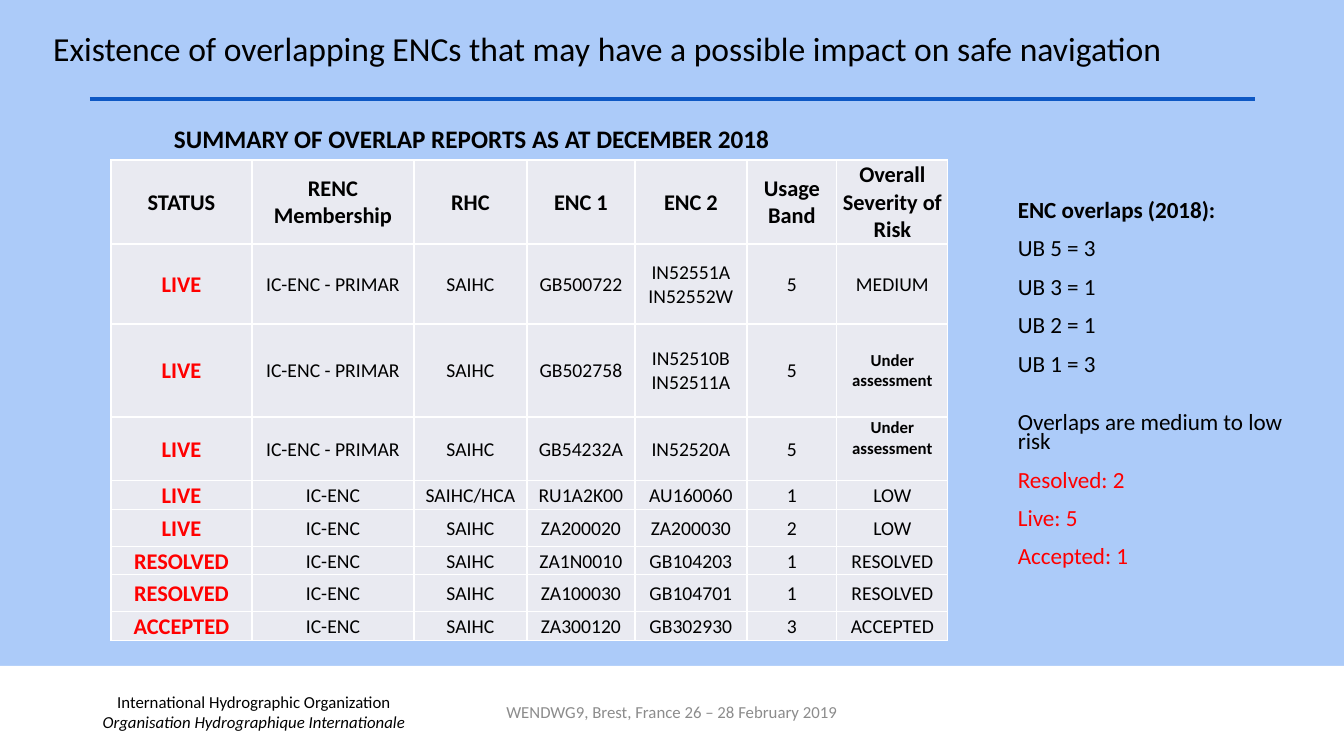
"""Build the slide on overlapping ENCs with its report table and summary."""
from lxml.etree import SubElement
from pptx import Presentation
from pptx.dml.color import RGBColor
from pptx.enum.shapes import MSO_CONNECTOR, MSO_SHAPE
from pptx.enum.text import MSO_ANCHOR, PP_ALIGN
from pptx.oxml import parse_xml
from pptx.oxml.ns import nsdecls, qn
from pptx.util import Pt

PX = 914400 / 100.8
BLACK = RGBColor(0x00, 0x00, 0x00)
WHITE = RGBColor(0xFF, 0xFF, 0xFF)
RED = RGBColor(0xFF, 0x00, 0x00)
GREY = RGBColor(0x8C, 0x8C, 0x8C)
SKY = RGBColor(0xAC, 0xCB, 0xF9)
BLUE = RGBColor(0x0E, 0x58, 0xC4)
PALE = RGBColor(0xE9, 0xEA, 0xF1)


def px(*sizes):
    """Turn pixels into EMU."""
    return [round(size * PX) for size in sizes]


def write(frame, lines, size, color=BLACK, bold=False, align=PP_ALIGN.LEFT, space=None):
    """Fill a text frame with one paragraph a line."""
    frame.word_wrap = True
    for i, line in enumerate(lines):
        para = frame.add_paragraph() if i else frame.paragraphs[0]
        para.alignment = align
        para.line_spacing = space
        run = para.add_run()
        run.text = line
        font = run.font
        font.name, font.size, font.bold = "Calibri", Pt(size), bold
        font.color.rgb = color


deck = Presentation()
deck.slide_width, deck.slide_height = px(1344, 756)
slide = deck.slides.add_slide(deck.slide_layouts[5])
slide.background.fill.solid()
slide.background.fill.fore_color.rgb = SKY
shapes = slide.shapes

rule = shapes.add_connector(MSO_CONNECTOR.STRAIGHT, *px(90, 99, 1255, 99))
rule.line.color.rgb = BLUE
rule.line.width = Pt(2.25)
SubElement(rule.element.spPr, qn("a:effectLst"))

band = shapes.add_shape(MSO_SHAPE.RECTANGLE, *px(0, 666, 1344, 90))
band.shadow.inherit = False
band.fill.solid()
band.fill.fore_color.rgb = WHITE
band.line.fill.background()

title = shapes.title
title.left, title.top, title.width, title.height = px(43, 15, 1300, 71)
title.text_frame.vertical_anchor = MSO_ANCHOR.MIDDLE
write(title.text_frame,
      ["Existence of overlapping ENCs that may have a possible impact on safe navigation"],
      24, space=0.9)

body = shapes.add_textbox(*px(27, 692, 454, 40)).text_frame
body.vertical_anchor = MSO_ANCHOR.MIDDLE
write(body, ["International Hydrographic Organization",
             "Organisation Hydrographique Internationale"], 12, align=PP_ALIGN.CENTER)
body.paragraphs[1].runs[0].font.italic = True

event = shapes.add_textbox(*px(445, 692, 454, 40)).text_frame
event.vertical_anchor = MSO_ANCHOR.MIDDLE
write(event, ["WENDWG9, Brest, France 26 – 28 February 2019"], 12, GREY, align=PP_ALIGN.CENTER)

head = shapes.add_textbox(*px(164, 122, 780, 53)).text_frame
write(head, ["SUMMARY OF OVERLAP REPORTS AS AT DECEMBER 2018"], 18, bold=True, space=0.9)

WAIT = "Under assessment"
ROWS = [
    ["STATUS", "RENC Membership", "RHC", "ENC 1", "ENC 2", "Usage Band",
     "Overall Severity of Risk"],
    ["LIVE", "IC-ENC - PRIMAR", "SAIHC", "GB500722", "IN52551A\nIN52552W", "5", "MEDIUM"],
    ["LIVE", "IC-ENC - PRIMAR", "SAIHC", "GB502758", "IN52510B\nIN52511A", "5", WAIT],
    ["LIVE", "IC-ENC - PRIMAR", "SAIHC", "GB54232A", "IN52520A", "5", WAIT],
    ["LIVE", "IC-ENC", "SAIHC/HCA", "RU1A2K00", "AU160060", "1", "LOW"],
    ["LIVE", "IC-ENC", "SAIHC", "ZA200020", "ZA200030", "2", "LOW"],
    ["RESOLVED", "IC-ENC", "SAIHC", "ZA1N0010", "GB104203", "1", "RESOLVED"],
    ["RESOLVED", "IC-ENC", "SAIHC", "ZA100030", "GB104701", "1", "RESOLVED"],
    ["ACCEPTED", "IC-ENC", "SAIHC", "ZA300120", "GB302930", "3", "ACCEPTED"],
]
WIDE = [141, 162, 113, 108, 112, 90, 111]
HIGH = [84, 80, 93, 64, 29, 37, 28, 37, 29]
grid = shapes.add_table(len(HIGH), len(WIDE), *px(111, 160, sum(WIDE), sum(HIGH))).table
grid.first_row = grid.horz_banding = False
for col, wide in zip(grid.columns, px(*WIDE)):
    col.width = wide
for row, high in zip(grid.rows, px(*HIGH)):
    row.height = high
for r, texts in enumerate(ROWS):
    for c, text in enumerate(texts):
        cell = grid.cell(r, c)
        cell.margin_left, cell.margin_right, cell.margin_top, cell.margin_bottom = px(1, 1, 1, 0)
        cell.vertical_anchor = MSO_ANCHOR.MIDDLE
        props = cell._tc.get_or_add_tcPr()
        for side in "LRTB":
            props.append(parse_xml(
                f'<a:ln{side} {nsdecls("a")} w="12700"><a:solidFill>'
                f'<a:srgbClr val="{WHITE}"/></a:solidFill></a:ln{side}>'))
        cell.fill.solid()
        cell.fill.fore_color.rgb = PALE
        bold = r == 0 or c == 0 or text == WAIT
        size = 12 if text == WAIT else 16 if bold else 14
        color = RED if r and c == 0 else BLACK
        write(cell.text_frame, text.split("\n"), size, color, bold, PP_ALIGN.CENTER)
grid.cell(3, 6).vertical_anchor = MSO_ANCHOR.TOP

notes = ["ENC overlaps (2018):", "UB 5 = 3", "UB 3 = 1", "UB 2 = 1", "UB 1 = 3",
         "Overlaps are medium to low risk", "Resolved: 2", "Live: 5", "Accepted: 1"]
side = shapes.add_textbox(*px(1008, 198, 302, 415)).text_frame
write(side, notes, 16.5, space=0.7)
side.paragraphs[0].runs[0].font.bold = True
for i, para in enumerate(side.paragraphs[1:], 1):
    para.space_before = Pt(27.5 if i == 5 else 13.6)
    if i > 5:
        para.runs[0].font.color.rgb = RED

deck.save("out.pptx")
